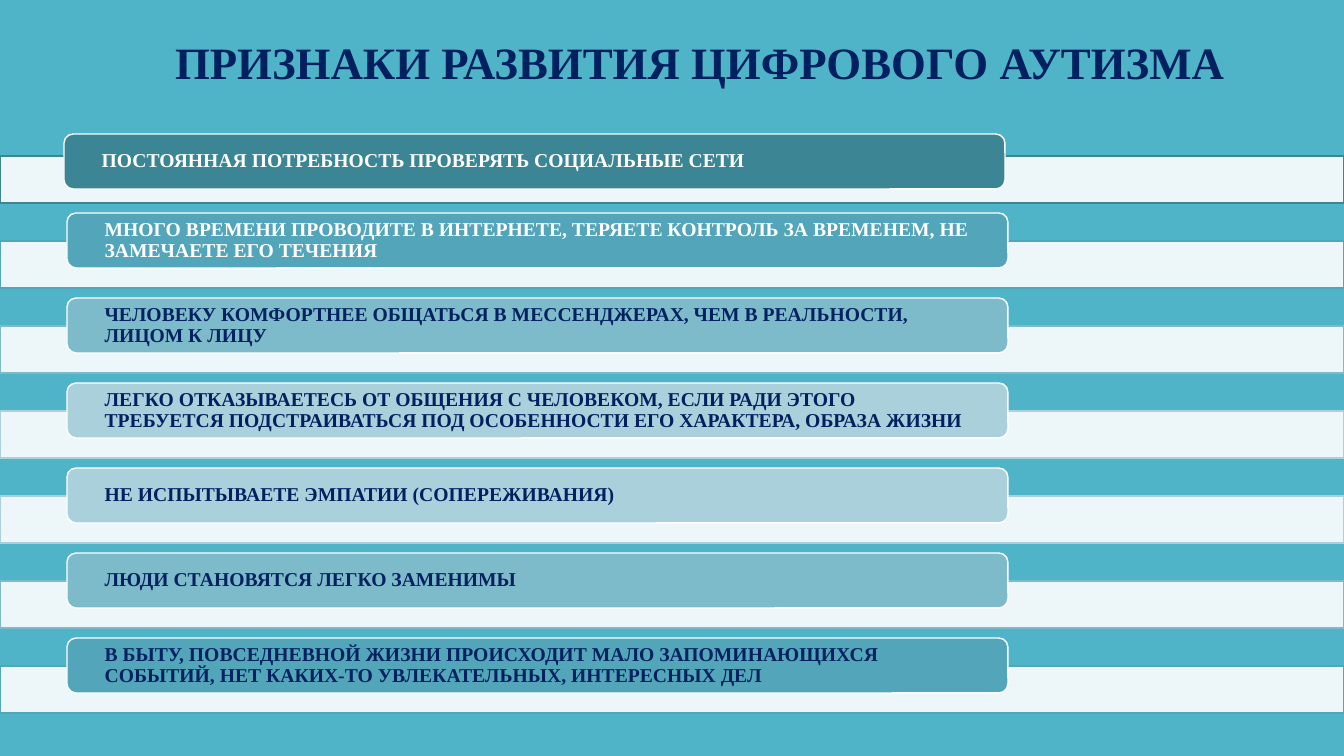
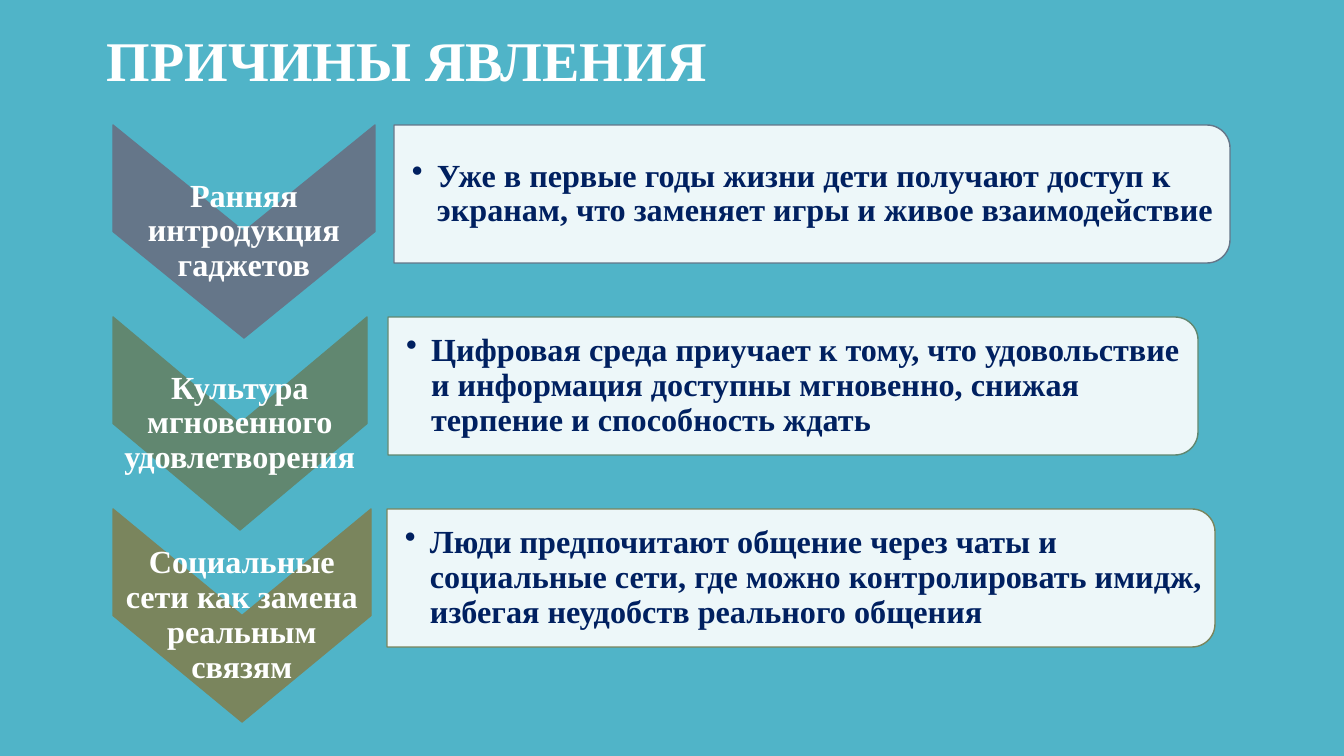
import pptx
import pptx.dml.color
import pptx.enum.shapes
import pptx.enum.text
import pptx.oxml.ns
import pptx.util
import lxml.etree

RGBColor = pptx.dml.color.RGBColor
BACKGROUND = RGBColor(0x50, 0xB4, 0xC8)
WHITE = RGBColor(0xFF, 0xFF, 0xFF)
NAVY = RGBColor(0x00, 0x20, 0x60)
TEAL_DARK = RGBColor(0x3B, 0x85, 0x94)
TEAL = RGBColor(0x53, 0xA6, 0xB9)
TEAL_LIGHT = RGBColor(0x7E, 0xBB, 0xCA)
TEAL_PALE = RGBColor(0xA9, 0xD0, 0xDB)
SLATE = RGBColor(0x65, 0x76, 0x89)
GREEN = RGBColor(0x61, 0x87, 0x70)
OLIVE = RGBColor(0x7A, 0x85, 0x5D)

WIDTH, HEIGHT = 1344, 756
PX = 12192000 / WIDTH
FONT = "Times New Roman"
SHAPES = pptx.enum.shapes.MSO_SHAPE
ALIGN = pptx.enum.text.PP_ALIGN
ANCHOR = pptx.enum.text.MSO_ANCHOR
qn = pptx.oxml.ns.qn


def add_box(slide, kind, box, fill, line, opacity=100, rotation=0):
    left, top, width, height = box
    if rotation == 90:
        left, top = left + (width - height) / 2, top + (height - width) / 2
        width, height = height, width
    shape = slide.shapes.add_shape(kind, *(round(value * PX) for value in (left, top, width, height)))
    shape.rotation = rotation
    shape.shadow.inherit = False
    shape.fill.solid()
    shape.fill.fore_color.rgb = fill
    shape.line.color.rgb = line
    shape.line.width = pptx.util.Pt(1)
    if opacity < 100:
        color = shape._element.spPr.find(qn("a:solidFill"))[0]
        lxml.etree.SubElement(color, qn("a:alpha")).set("val", str(opacity * 1000))
    return shape


def write_text(shape, text, size, color, margins, anchor=ANCHOR.MIDDLE, align=ALIGN.LEFT, spacing=0.9):
    frame = shape.text_frame
    frame.text = text
    paragraph = frame.paragraphs[0]
    font = paragraph.runs[0].font
    sides = ("margin_left", "margin_top", "margin_right", "margin_bottom")
    formats = (
        (frame, {"word_wrap": True, "auto_size": pptx.enum.text.MSO_AUTO_SIZE.NONE, "vertical_anchor": anchor}),
        (frame, {side: round(margin * PX) for side, margin in zip(sides, margins)}),
        (paragraph, {"alignment": align, "line_spacing": spacing}),
        (font, {"name": FONT, "size": pptx.util.Pt(size), "bold": True}),
        (font.color, {"rgb": color}),
    )
    for target, values in formats:
        for name, value in values.items():
            setattr(target, name, value)
    return paragraph


presentation = pptx.Presentation()
presentation.slide_width = round(WIDTH * PX)
presentation.slide_height = round(HEIGHT * PX)
background = presentation.slide_master.background.fill
background.solid()
background.fore_color.rgb = BACKGROUND

titles = (
    ("ПРИЗНАКИ РАЗВИТИЯ ЦИФРОВОГО АУТИЗМА", 32, NAVY, (165, 30, 1080, 65)),
    ("ПРИЧИНЫ ЯВЛЕНИЯ", 40, WHITE, (97, 21, 672, 78)),
)
slides = []
for text, size, color, box in titles:
    slide = presentation.slides.add_slide(presentation.slide_layouts[5])
    title = slide.shapes.title
    for name, value in zip(("left", "top", "width", "height"), box):
        setattr(title, name, round(value * PX))
    write_text(title, text, size, color, (10, 5, 10, 5), anchor=ANCHOR.TOP, spacing=1.0)
    slides.append(slide)
signs_slide, causes_slide = slides

signs = (
    ("ПОСТОЯННАЯ ПОТРЕБНОСТЬ ПРОВЕРЯТЬ СОЦИАЛЬНЫЕ СЕТИ", TEAL_DARK, WHITE),
    ("МНОГО ВРЕМЕНИ ПРОВОДИТЕ В ИНТЕРНЕТЕ, ТЕРЯЕТЕ КОНТРОЛЬ ЗА ВРЕМЕНЕМ, НЕ ЗАМЕЧАЕТЕ ЕГО ТЕЧЕНИЯ", TEAL, WHITE),
    ("ЧЕЛОВЕКУ КОМФОРТНЕЕ ОБЩАТЬСЯ В МЕССЕНДЖЕРАХ, ЧЕМ В РЕАЛЬНОСТИ, ЛИЦОМ К ЛИЦУ", TEAL_LIGHT, NAVY),
    ("ЛЕГКО ОТКАЗЫВАЕТЕСЬ ОТ ОБЩЕНИЯ С ЧЕЛОВЕКОМ, ЕСЛИ РАДИ ЭТОГО ТРЕБУЕТСЯ ПОДСТРАИВАТЬСЯ "
     "ПОД ОСОБЕННОСТИ ЕГО ХАРАКТЕРА, ОБРАЗА ЖИЗНИ", TEAL_PALE, NAVY),
    ("НЕ ИСПЫТЫВАЕТЕ ЭМПАТИИ (СОПЕРЕЖИВАНИЯ)", TEAL_PALE, NAVY),
    ("ЛЮДИ СТАНОВЯТСЯ ЛЕГКО ЗАМЕНИМЫ", TEAL_LIGHT, NAVY),
    ("В БЫТУ, ПОВСЕДНЕВНОЙ ЖИЗНИ ПРОИСХОДИТ МАЛО ЗАПОМИНАЮЩИХСЯ СОБЫТИЙ, "
     "НЕТ КАКИХ-ТО УВЛЕКАТЕЛЬНЫХ, ИНТЕРЕСНЫХ ДЕЛ", TEAL, NAVY),
)
for row, (text, fill, color) in enumerate(signs):
    band_top = 156 + 85 * row
    pill_left, pill_top = (67, band_top - 28) if row else (64, band_top - 22)
    add_box(signs_slide, SHAPES.RECTANGLE, (0, band_top, WIDTH, 47), WHITE, fill, opacity=90)
    pill = add_box(signs_slide, SHAPES.ROUNDED_RECTANGLE, (pill_left, pill_top, 941, 55), fill, WHITE)
    write_text(pill, text, 14, color, (35, 0, 35, 0))

causes = (
    ("Ранняя интродукция гаджетов",
     "Уже в первые годы жизни дети получают доступ к экранам, что заменяет игры и живое взаимодействие",
     SLATE, 262, 394, 836),
    ("Культура мгновенного удовлетворения",
     "Цифровая среда приучает к тому, что удовольствие и информация доступны мгновенно, "
     "снижая терпение и способность ждать",
     GREEN, 254, 388, 810),
    ("Социальные сети как замена реальным связям",
     "Люди предпочитают общение через чаты и социальные сети, где можно контролировать имидж, "
     "избегая неудобств реального общения",
     OLIVE, 258, 387, 828),
)
for row, (cause, detail, color, chevron_width, panel_left, panel_width) in enumerate(causes):
    top = 125 + 192 * row
    chevron_box = (113, top, chevron_width, 213)
    panel_box = (panel_left, top, panel_width, 138)
    add_box(causes_slide, SHAPES.CHEVRON, chevron_box, color, color, rotation=90)
    add_box(causes_slide, SHAPES.ROUND_2_SAME_RECTANGLE, panel_box, WHITE, color, opacity=90, rotation=90)
    label = causes_slide.shapes.add_textbox(*(round(value * PX) for value in chevron_box))
    write_text(label, cause, 23, WHITE, (2, 2, 2, 2), align=ALIGN.CENTER)
    description = causes_slide.shapes.add_textbox(*(round(value * PX) for value in panel_box))
    paragraph = write_text(description, detail, 23, NAVY, (18, 2, 9, 2))
    properties = paragraph._p.get_or_add_pPr()
    properties.set("marL", str(round(25 * PX)))
    properties.set("indent", str(round(-25 * PX)))
    lxml.etree.SubElement(properties, qn("a:buChar")).set("char", "•")

presentation.save("out.pptx")
